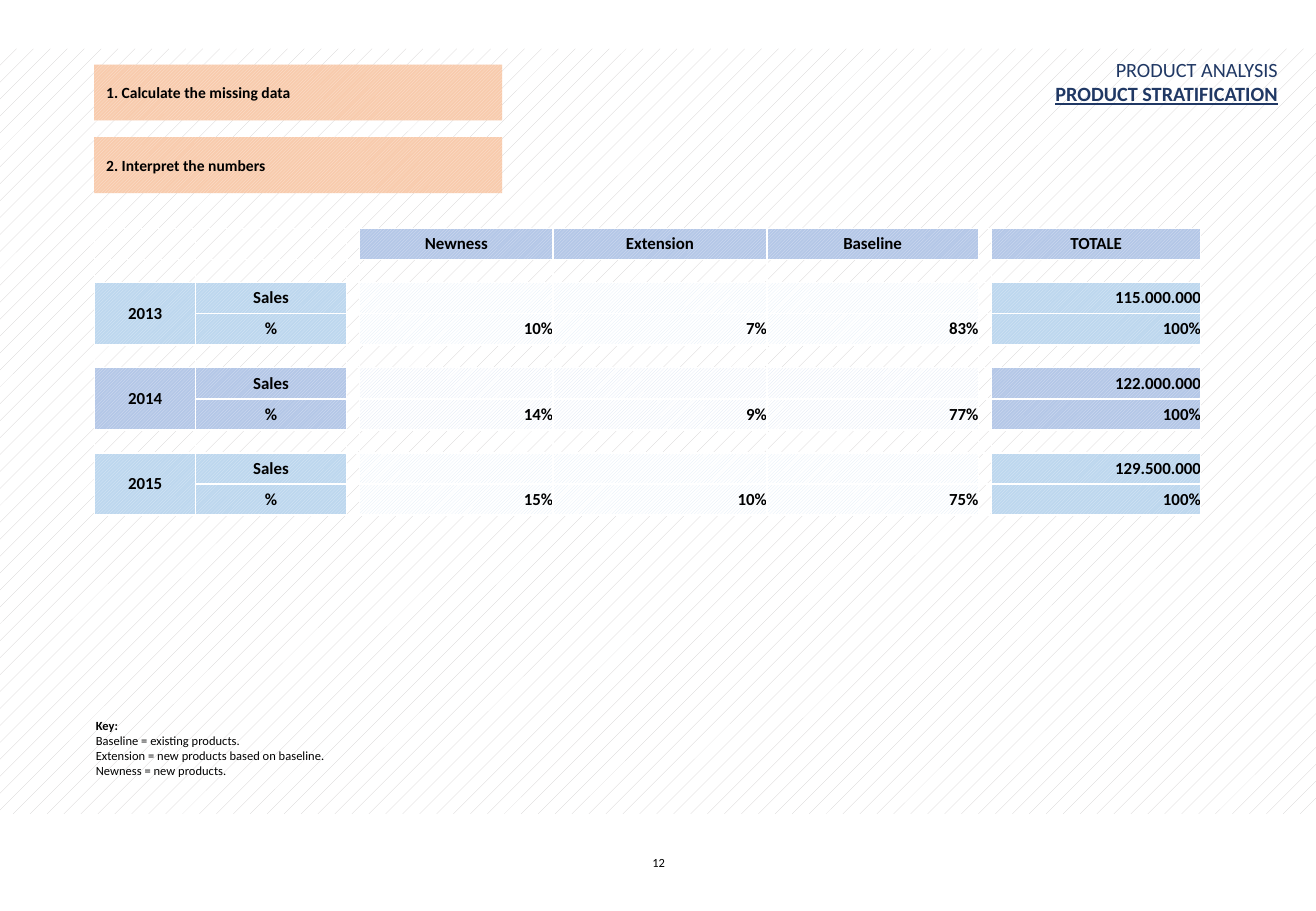
from dataclasses import dataclass

from lxml import etree
from pptx import Presentation
from pptx.dml.color import RGBColor
from pptx.enum.dml import MSO_PATTERN
from pptx.enum.shapes import MSO_SHAPE
from pptx.enum.text import MSO_ANCHOR, MSO_AUTO_SIZE, PP_ALIGN
from pptx.oxml.ns import qn
from pptx.util import Cm, Pt

LEFT, CENTER, RIGHT = PP_ALIGN.LEFT, PP_ALIGN.CENTER, PP_ALIGN.RIGHT
TOP, MIDDLE = MSO_ANCHOR.TOP, MSO_ANCHOR.MIDDLE
DOTS = MSO_PATTERN.PERCENT_5
LIGHT_DIAGONAL = MSO_PATTERN.LIGHT_UPWARD_DIAGONAL
DARK_DIAGONAL = MSO_PATTERN.DARK_UPWARD_DIAGONAL
RECTANGLE = MSO_SHAPE.RECTANGLE
FIXED_SIZE = MSO_AUTO_SIZE.NONE


@dataclass(frozen=True)
class Theme:
    font: str = "Calibri"
    ink: str = "000000"
    navy: str = "203864"
    white: str = "FFFFFF"
    # Pattern colours: lines, ground
    backdrop: tuple = ("D0CECE", "FFFFFF")
    peach: tuple = ("FBE5D6", "F8CBAD")
    sky: tuple = ("DEEBF7", "BDD7EE")
    periwinkle: tuple = ("DAE3F3", "B4C7E7")
    title_size: float = 12
    table_size: float = 10
    task_size: float = 9.2
    small_size: float = 7.4


class SlideBuilder:
    def __init__(self, slide, theme):
        self.slide = slide
        self.theme = theme

    def place(self, shape, left, top, width, height):
        shape.left, shape.top = Cm(left), Cm(top)
        shape.width, shape.height = Cm(width), Cm(height)

    def pattern(self, fill, kind, colors):
        fill.patterned()
        fill.pattern = kind
        fill.fore_color.rgb, fill.back_color.rgb = map(RGBColor.from_string, colors)

    def style(self, para, size, color=None, bold=False, align=LEFT):
        para.alignment = align
        para.space_before = Pt(0)
        para.font.name = self.theme.font
        para.font.size = Pt(size)
        para.font.bold = bold
        para.font.color.rgb = RGBColor.from_string(color or self.theme.ink)

    def set_text(self, frame, lines, size, anchor=TOP, **look):
        frame.word_wrap = True
        frame.auto_size = FIXED_SIZE
        frame.vertical_anchor = anchor
        frame.text = "\n".join(lines)
        for para in frame.paragraphs:
            self.style(para, size, **look)

    def rectangle(self, area, kind, colors):
        box = self.slide.shapes.add_shape(RECTANGLE, *map(Cm, area))
        box.shadow.inherit = False
        box.line.fill.background()
        self.pattern(box.fill, kind, colors)
        return box

    def backdrop(self, *area):
        box = self.rectangle(area, DOTS, self.theme.backdrop)
        self.slide.shapes._spTree.insert(2, box._element)

    def title(self, lines, *area):
        title = self.slide.shapes.title
        self.place(title, *area)
        self.set_text(title.text_frame, lines, self.theme.title_size,
                      color=self.theme.navy, align=RIGHT)
        last = title.text_frame.paragraphs[-1].font
        last.bold = last.underline = True

    def task(self, text, *area):
        box = self.rectangle(area, LIGHT_DIAGONAL, self.theme.peach)
        self.set_text(box.text_frame, [text], self.theme.task_size, anchor=MIDDLE, bold=True)

    def key(self, lines, *area):
        body = self.slide.placeholders[1]
        self.place(body, *area)
        self.set_text(body.text_frame, lines, self.theme.small_size)
        body.text_frame.paragraphs[0].font.bold = True
        for para in body.text_frame.paragraphs:
            properties = para._p.get_or_add_pPr()
            properties.set("marL", "0")
            properties.set("indent", "0")
            properties.insert_element_before(
                properties.makeelement(qn("a:buNone")), "a:defRPr")

    def page_number(self, text, *area):
        box = self.slide.shapes.add_textbox(*map(Cm, area))
        self.set_text(box.text_frame, [text], self.theme.small_size, align=CENTER)

    def table(self, left, top, columns, rows):
        frame = self.slide.shapes.add_table(
            len(rows), len(columns), Cm(left), Cm(top), Cm(sum(columns)), Cm(sum(rows)))
        table = frame.table
        table.first_row = table.horz_banding = False
        for column, width in zip(table.columns, columns):
            column.width = Cm(width)
        for row, height in zip(table.rows, rows):
            row.height = Cm(height)
        for cell in table.iter_cells():
            self.blank_cell(cell)
        return table

    def blank_cell(self, cell):
        cell.margin_left = cell.margin_right = cell.margin_top = cell.margin_bottom = 0
        cell.vertical_anchor = MIDDLE
        properties = cell._tc.get_or_add_tcPr()
        for side in ("lnL", "lnR", "lnT", "lnB"):
            line = etree.SubElement(properties, qn(f"a:{side}"), w=str(Pt(1)))
            solid = etree.SubElement(line, qn("a:solidFill"))
            etree.SubElement(solid, qn("a:srgbClr"), val=self.theme.white)
        cell.fill.background()
        # Keeps an empty row from growing to the default type size
        etree.SubElement(cell.text_frame.paragraphs[0]._p, qn("a:endParaRPr"),
                         sz=str(self.theme.table_size * 100))

    def fill_cell(self, cell, text, colors, align=CENTER):
        self.pattern(cell.fill, DARK_DIAGONAL, colors)
        if text:
            para = cell.text_frame.paragraphs[0]
            para.add_run().text = text
            self.style(para, self.theme.table_size, bold=True, align=align)


def main():
    deck = Presentation()
    deck.slide_width, deck.slide_height = Cm(27.51), Cm(19.05)
    theme = Theme()
    page = SlideBuilder(deck.slides.add_slide(deck.slide_layouts[1]), theme)

    # Backdrop, title and page number
    page.backdrop(0, 1.02, 27.51, 16)
    page.title(["PRODUCT ANALYSIS", "PRODUCT STRATIFICATION"], 19.05, 1.07, 7.92, 1.27)
    page.page_number("12", 10.67, 17.75, 6.2, 1.02)

    # Tasks
    for index, task in enumerate(["1. Calculate the missing data", "2. Interpret the numbers"]):
        page.task(task, 1.97, 1.35 + index * 1.52, 8.53, 1.17)

    # Sales table: a header, then a gap and two rows for each year
    years = [
        ("2013", ["10%", "7%", "83%"], "115.000.000", theme.sky),
        ("2014", ["14%", "9%", "77%"], "122.000.000", theme.periwinkle),
        ("2015", ["15%", "10%", "75%"], "129.500.000", theme.sky),
    ]
    table = page.table(1.98, 4.78, [2.11, 3.15, 0.28, 4.04, 4.47, 4.42, 0.28, 4.37],
                       [0.65] + [0.48, 0.65, 0.65] * len(years))
    headings = {3: "Newness", 4: "Extension", 5: "Baseline", 7: "TOTALE"}
    for column, heading in headings.items():
        page.fill_cell(table.cell(0, column), heading, theme.periwinkle)

    for index, (year, shares, total, colors) in enumerate(years):
        first = 2 + index * 3
        table.cell(first, 0).merge(table.cell(first + 1, 0))
        page.fill_cell(table.cell(first, 0), year, colors)
        measures = [("Sales", [""] * 3, total), ("%", shares, "100%")]
        for row, (measure, values, row_total) in enumerate(measures, first):
            page.fill_cell(table.cell(row, 1), measure, colors)
            for column, value in enumerate(values, 3):
                page.fill_cell(table.cell(row, column), value, (colors[0], theme.white), RIGHT)
            page.fill_cell(table.cell(row, 7), row_total, colors, RIGHT)

    # Key
    page.key(["Key:", "Baseline = existing products.",
              "Extension = new products based on baseline.", "Newness = new products."],
             1.75, 14.88, 18.62, 1.52)

    deck.save("out.pptx")


if __name__ == "__main__":
    main()
